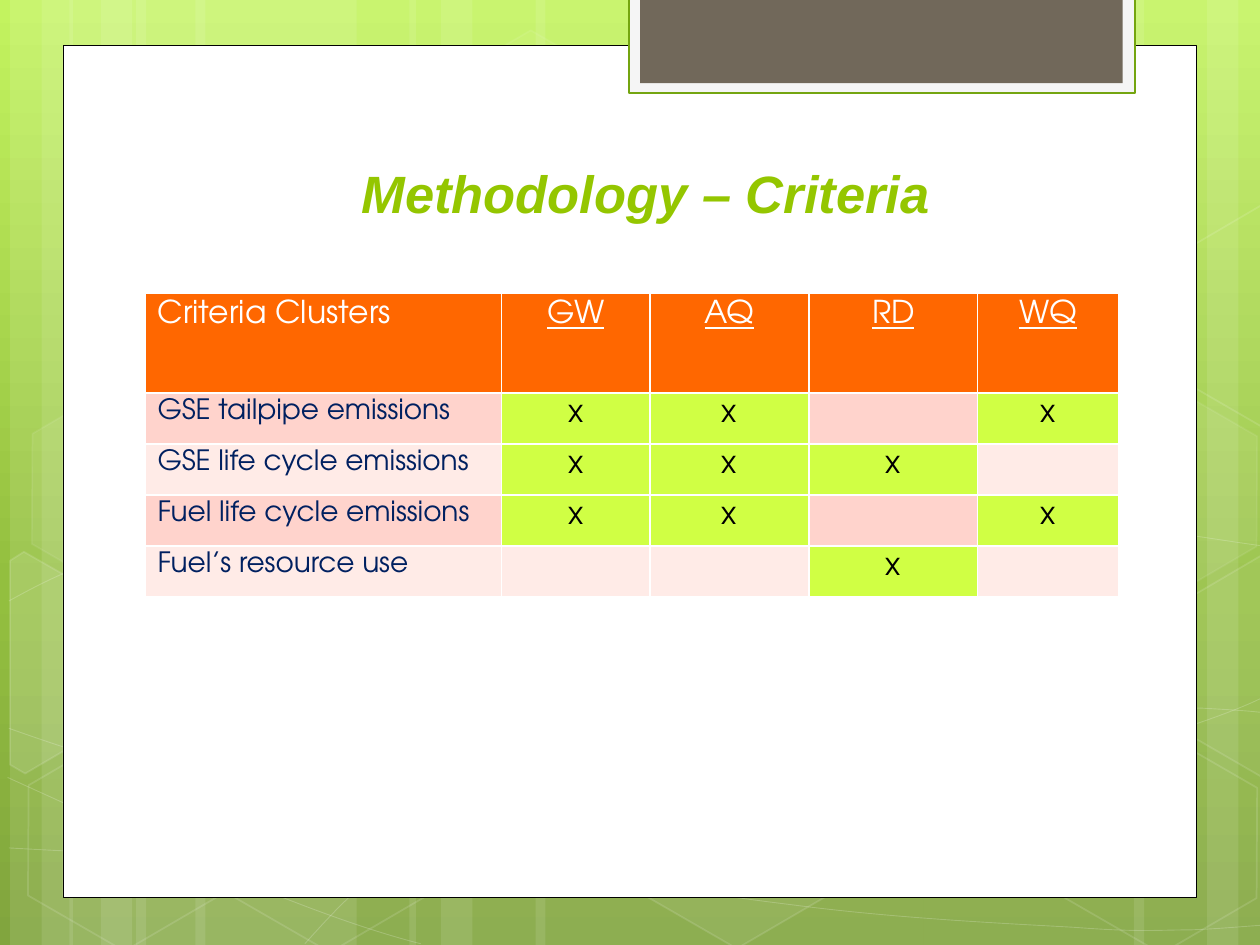
from copy import deepcopy

from lxml.etree import SubElement as Sub
from pptx import Presentation
from pptx.dml.color import RGBColor as Rgb
from pptx.enum.shapes import MSO_SHAPE as Kind
from pptx.enum.text import MSO_ANCHOR as Anchor, PP_ALIGN as Align
from pptx.oxml import parse_xml
from pptx.oxml.ns import nsdecls, qn
from pptx.util import Inches, Pt

THEME = dict(
    white="FFFFFF", black="000000", lime="94C600", edge="74A510", pale="F5F5F5",
    taupe="71685A", head="FF6700", mark="D0FF44", navy="002060",
    bands=("FFD3CC", "FFEBE7"), sky=((0, "C3F35F"), (0.62, "93BF3F"), (1, "81A53E")),
    title=("Arial", 30), big=("TeX Gyre Adventor", 18), small=("TeX Gyre Adventor", 16),
)
TITLE = "Methodology – Criteria"
HEAD = ["Criteria Clusters", "GW", "AQ", "RD", "WQ"]
ROWS = [
    ["GSE tailpipe emissions", "x", "x", "", "x"],
    ["GSE life cycle emissions", "x", "x", "x", ""],
    ["Fuel life cycle emissions", "x", "x", "", "x"],
    ["Fuel’s resource use", "", "", "x", ""],
]
WIDTHS = [2.83, 1.18, 1.26, 1.34, 1.12]
TALL, TOP = 2.41, 0.79
TALLS = [TOP] + [(TALL - TOP) / len(ROWS)] * len(ROWS)
BARS = [
    (1.08, 1.75), (0.08, 0.5), (0.33, 0.83), (1.55, 1.75), (0.55, 0.5), (0.8, 0.83),
    (7.33, 1.75), (9.58, 0.5), (9, 0.83), (4.25, 3.08), (3.25, 0.5), (3.5, 0.83),
]
CURVES = [
    [(0.07, 6.73), (0.61, 6.76), (1.15, 6.79), (1.9, 6.78), (2.65, 6.77), (3.58, 6.75),
     (4.58, 6.65), (5.58, 6.55), (7, 6.36), (7.92, 6.17), (8.83, 5.98), (9.77, 5.68),
     (10.07, 5.51)],
    [(0.07, 4.77), (0.36, 4.61), (0.65, 4.46), (1.21, 4.31), (1.78, 4.16), (2.59, 3.94),
     (3.47, 3.87), (4.36, 3.8), (5.44, 3.79), (6.54, 3.87), (7.64, 3.95), (9.47, 4.26),
     (10.07, 4.34)],
    [(0.06, 6.17), (1.27, 6.72), (2.47, 7.27), (3.34, 7.49)],
    [(0.07, 5.78), (0.38, 5.89), (0.7, 6), (1.28, 6.16), (1.86, 6.31), (2.73, 6.56),
     (3.57, 6.73), (4.4, 6.9), (5.45, 7.08), (6.28, 7.18), (7.11, 7.29), (8, 7.33),
     (8.53, 7.36), (9.05, 7.4), (9.19, 7.38), (9.45, 7.38), (9.71, 7.37), (9.89, 7.35),
     (10.07, 7.34)],
    [(2.42, 7.49), (2.6, 7.29), (2.78, 7.09), (3.02, 6.91), (3.26, 6.73), (3.6, 6.53),
     (3.88, 6.39), (4.16, 6.25), (4.33, 6.19), (4.7, 6.09), (5.06, 5.99), (5.73, 5.85),
     (6.08, 5.78), (6.44, 5.71), (6.49, 5.71), (6.8, 5.69), (7.11, 5.66), (7.6, 5.63),
     (7.94, 5.62), (8.29, 5.61), (8.86, 5.62), (8.86, 5.62), (8.86, 5.62), (9.53, 5.62),
     (9.53, 5.62), (9.71, 5.63), (9.88, 5.64), (9.97, 5.65), (10.06, 5.66), (10.03, 5.65),
     (10.06, 5.66)],
]
HEXES = [
    (3.34, 0.36, 4, 8), (4.97, 5.89, 6, 12), (0.11, 5.91, 0, 12), (0.14, 3.12, 7, 8),
    (1.74, 5.92, 0, 12), (7.53, 4.53, 10, 12), (8.34, 5.93, 0, 12), (8.34, 3.14, 7, 8),
]
CUTS = [
    (10, [(0.08, 4.45), (0.19, 4.38), (0.96, 4.82), (0.95, 5.7), (0.2, 6.14), (0.08, 6.07)]),
    (4, [(9.26, 4.85), (10.01, 4.41), (10.09, 4.46), (10.09, 6.13), (10.02, 6.17),
         (9.26, 5.73)]),
    (0, [(9.26, 2.07), (10.01, 1.63), (10.1, 1.68), (10.09, 3.35), (10.02, 3.39),
         (9.26, 2.95)]),
]
PANELS = [
    ((0.5, 0.36, 9, 6.76), "white", "black", 0.5),
    ((4.99, -0.02, 4.02, 0.76), "pale", "edge", 1.25),
    ((5.08, -0.02, 3.83, 0.68), "taupe", None, 0),
]


def hue(name):
    return Rgb.from_string(THEME[name])


def fade(fill, name, alpha):
    fill.solid()
    fill.fore_color.rgb = hue(name)
    if alpha < 100:
        tint = fill._xPr.find(qn("a:solidFill"))[0]
        Sub(tint, qn("a:alpha"), val=str(alpha * 1000))


def paint(shape, fill, alpha=100, line=None, width=0, clear=100):
    shape.shadow.inherit = False
    if fill and alpha:
        fade(shape.fill, fill, alpha)
    else:
        shape.fill.background()
    if line:
        shape.line.width = Pt(width)
        fade(shape.line.fill, line, clear)
    else:
        shape.line.fill.background()


def put(slide, kind, *box):
    return slide.shapes.add_shape(kind, *map(Inches, box))


def trace(slide, dots, close):
    dots = [(Inches(x), Inches(y)) for x, y in dots]
    pen = slide.shapes.build_freeform(*dots[0])
    pen.add_line_segments(dots[1:], close=close)
    return pen.convert_to_shape()


def bend(shape):
    lines = list(shape.element.iter(qn("a:lnTo")))
    for i in range(0, len(lines), 3):
        curve = Sub(lines[i].getparent(), qn("a:cubicBezTo"))
        for line in lines[i:i + 3]:
            curve.append(line[0])
            line.getparent().remove(line)
    return shape


def style(para, face, color, align=Align.LEFT, **looks):
    para.alignment = align
    font = para.runs[0].font if para.runs else para.font
    font.name, size = THEME[face]
    font.size = Pt(size)
    font.color.rgb = hue(color)
    for key, val in looks.items():
        setattr(font, key, val)


def edge(cell):
    props = cell._tc.get_or_add_tcPr()
    for i, side in enumerate("LRTB"):
        props.insert(i, parse_xml(
            f'<a:ln{side} {nsdecls("a")} w="{Pt(1)}"><a:solidFill>'
            f'<a:srgbClr val="{THEME["white"]}"/></a:solidFill></a:ln{side}>'))


def sky(slide):
    fill = slide.background.fill
    fill.gradient()
    fill.gradient_angle = 270
    stops = slide.element.find(".//" + qn("a:gsLst"))
    stops.append(deepcopy(stops[0]))
    for stop, (at, color) in zip(fill.gradient_stops, THEME["sky"]):
        stop.position = at
        stop.color.rgb = Rgb.from_string(color)


def scene(slide):
    for x, wide in BARS:
        paint(put(slide, Kind.RECTANGLE, x, 0, wide, 7.5), "white", 10)
    for dots in CURVES:
        paint(bend(trace(slide, dots, False)), None, 0, "white", 0.5, 20)
    for x, y, alpha, clear in HEXES:
        shape = put(slide, Kind.HEXAGON, x, y, 1.75, 1.52)
        shape.adjustments[0] = 0.285
        shape.rotation = 30
        paint(shape, "white", alpha, "white", 1, clear)
    for alpha, dots in CUTS:
        paint(trace(slide, dots, True), "white", alpha, "white", 1, 12)
    for box, fill, line, width in PANELS:
        paint(put(slide, Kind.RECTANGLE, *box), fill, 100, line, width)


def title(slide):
    frame = slide.shapes.add_textbox(*map(Inches, (1, 1.22, 8.25, 0.61))).text_frame
    frame.word_wrap = True
    frame.vertical_anchor = Anchor.BOTTOM
    frame.text = TITLE
    style(frame.paragraphs[0], "title", "lime", Align.CENTER, bold=True, italic=True)


def grid(slide):
    box = map(Inches, (1.15, 2.33, sum(WIDTHS), TALL))
    table = slide.shapes.add_table(len(TALLS), len(WIDTHS), *box).table
    for col, wide in zip(table.columns, WIDTHS):
        col.width = Inches(wide)
    for row, tall in zip(table.rows, TALLS):
        row.height = Inches(tall)
    for r, words in enumerate([HEAD] + ROWS):
        for c, word in enumerate(words):
            cell = table.cell(r, c)
            cell.text = word
            para = cell.text_frame.paragraphs[0]
            align = Align.CENTER if c else Align.LEFT
            fill = THEME["bands"][(r - 1) % 2]
            if r == 0:
                fill = THEME["head"]
                style(para, "big", "white", align, bold=False, underline=c > 0)
            elif c == 0:
                style(para, "small", "navy", align)
            else:
                fill = THEME["mark"] if word else fill
                style(para, "big", "black", align)
            cell.fill.solid()
            cell.fill.fore_color.rgb = Rgb.from_string(fill)
            edge(cell)


def main():
    """Build the criteria slide."""
    deck = Presentation()
    deck.slide_width, deck.slide_height = Inches(10), Inches(7.5)
    slide = deck.slides.add_slide(deck.slide_layouts[6])
    for step in (sky, scene, title, grid):
        step(slide)
    deck.save("out.pptx")


if __name__ == "__main__":
    main()
